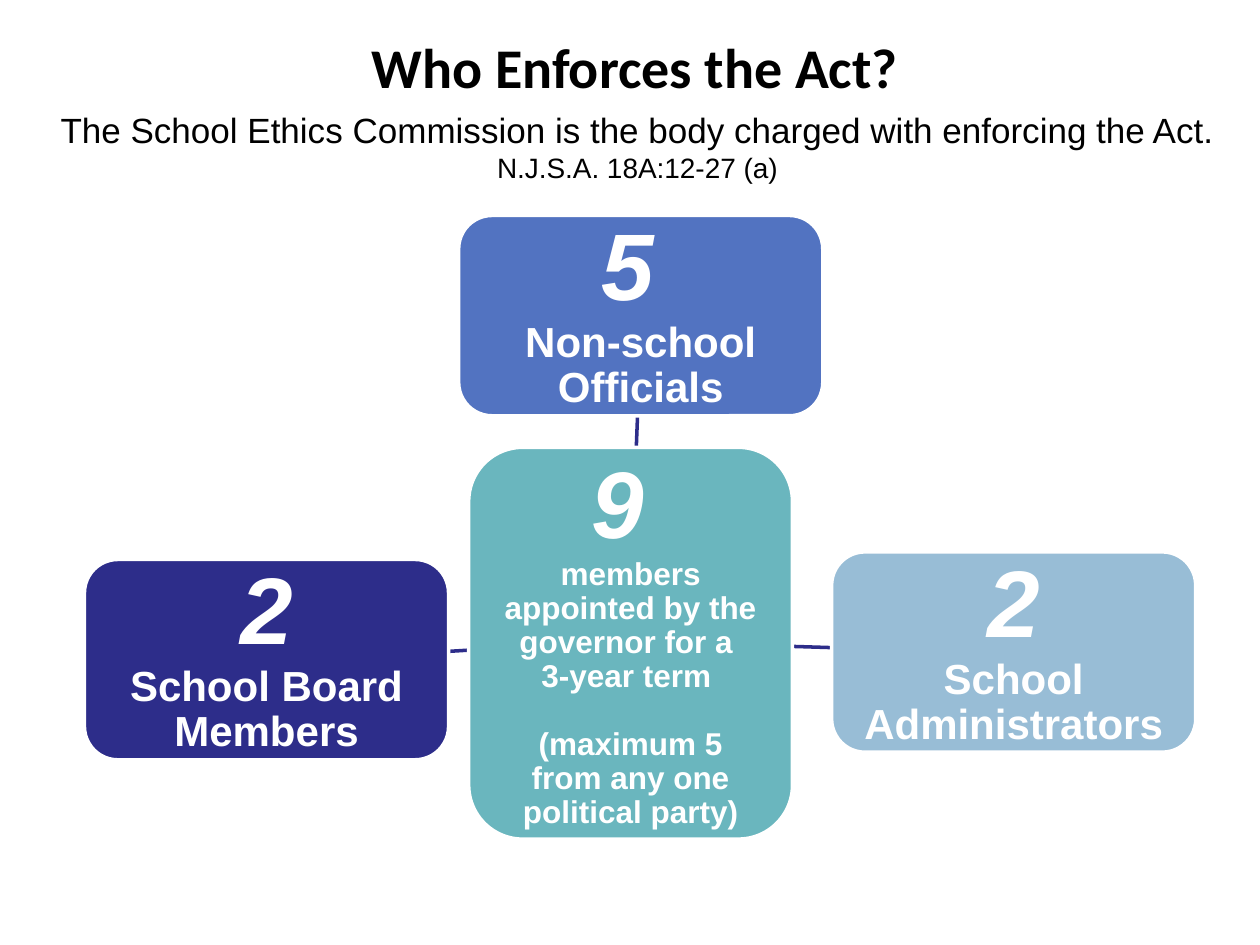
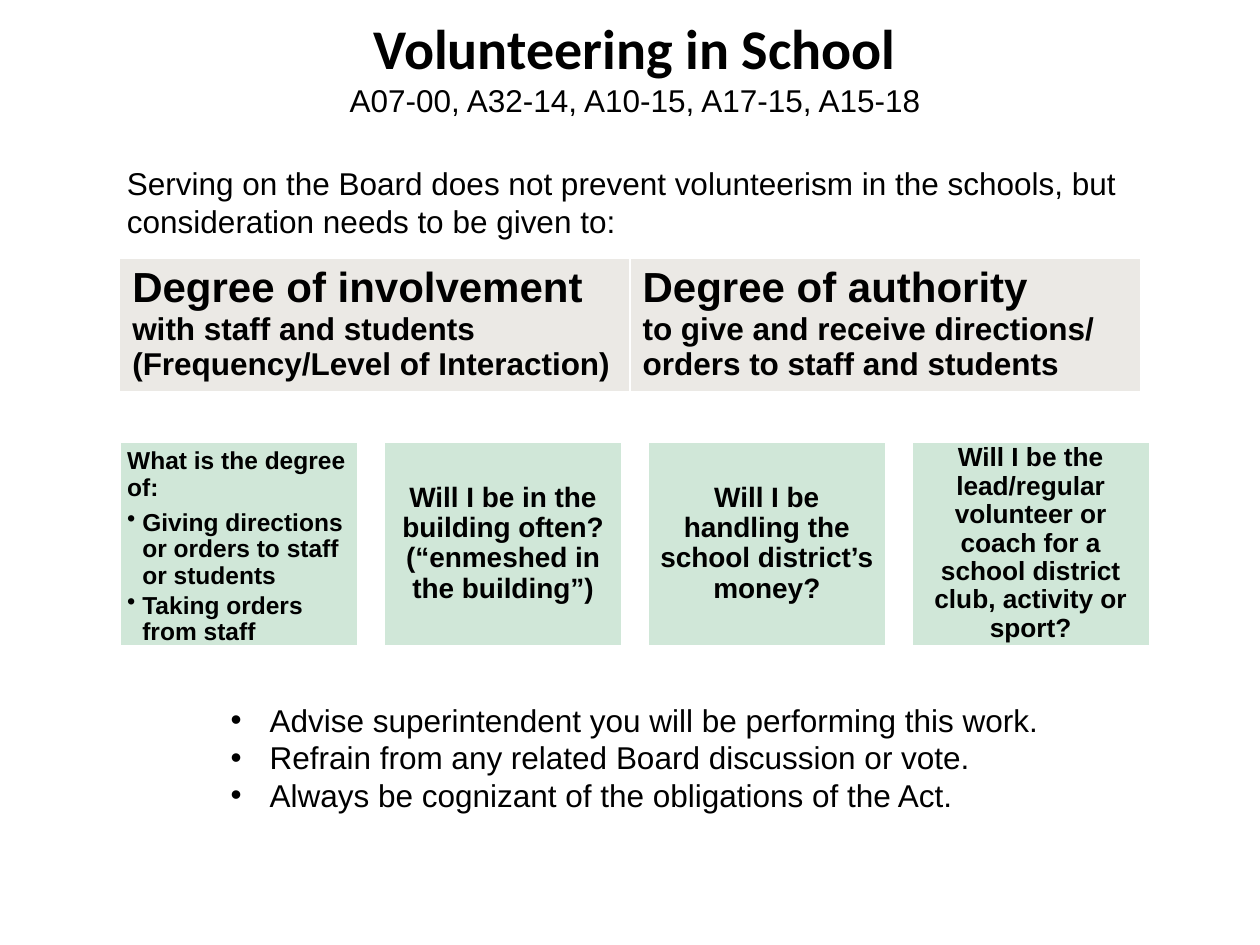
import lxml.etree
import pptx
import pptx.dml.color
import pptx.enum.shapes
import pptx.enum.text
import pptx.oxml.ns
import pptx.util

Inches, Pt = pptx.util.Inches, pptx.util.Pt
SHAPE = pptx.enum.shapes.MSO_SHAPE
ANCHOR = pptx.enum.text.MSO_ANCHOR
CENTER = pptx.enum.text.PP_ALIGN.CENTER
LEFT = pptx.enum.text.PP_ALIGN.LEFT

# Shared style
BLACK, WHITE, NAVY = "000000", "FFFFFF", "2D2D8A"
TEAL, BLUE, PALE_BLUE = "6AB6BE", "5273C1", "98BDD6"
CARD_GREEN, TABLE_GREY = "D0E7D8", "EBE9E5"
TITLE_AREA = (0.83, 0.17, 8.42, 0.71)
TITLE_FONT = {"name": "Calibri", "size": Pt(32), "bold": True}
NUMBER_FONT = {"size": Pt(54), "bold": True, "italic": True}

# Slide 1 content
ENFORCER_TITLE = "Who Enforces the Act?"
ENFORCER_LINES = [
    ("The School Ethics Commission is the body charged with enforcing the Act.", 20),
    ("N.J.S.A. 18A:12-27 (a)", 16),
]
COMMISSION_LINKS = [  # x1, y1, x2, y2
    (6.28, 5.13, 6.6, 5.14),
    (5.05, 3.55, 5.06, 3.3),
    (3.72, 5.16, 3.56, 5.17),
]
COMMISSION_BOXES = [  # area, fill, number, label size, label paragraphs
    ((3.72, 3.55, 2.57, 3.11), TEAL, "9 ", 18,
     ["members appointed by the governor for a \n3-year term ",
      "(maximum 5 from any one political party)"]),
    ((6.6, 4.38, 2.89, 1.59), PALE_BLUE, "2", 24, ["School Administrators"]),
    ((3.64, 1.71, 2.89, 1.59), BLUE, "5 ", 24, ["Non-school Officials"]),
    ((0.67, 4.44, 2.89, 1.59), NAVY, "2", 24, ["School Board Members"]),
]

# Slide 2 content
VOLUNTEER_TITLE = "Volunteering in School"
VOLUNTEER_CASES = "A07-00, A32-14, A10-15, A17-15, A15-18"
VOLUNTEER_INTRO = ("Serving on the Board does not prevent volunteerism in the schools, "
                   "but consideration needs to be given to:")
DEGREES = [
    ("Degree of involvement",
     ["with staff and students", "(Frequency/Level of Interaction)"]),
    ("Degree of authority",
     ["to give and receive directions/ orders to staff and students"]),
]
DIRECTION_QUESTION = "What is the degree of:"
DIRECTION_POINTS = ["Giving directions or orders to staff or students",
                    "Taking orders from staff"]
QUESTIONS = [  # text, size
    ("Will I be in the building often? (“enmeshed in the building”)", 16),
    ("Will I be handling the school district’s money?", 16),
    ("Will I be the lead/regular volunteer or coach for a school district club, "
     "activity or sport?", 15),
]
CARD_LEFT, CARD_TOP, CARD_WIDTH, CARD_HEIGHT = 0.95, 3.5, 1.9, 1.63
CARD_STEP = (7.23 - CARD_LEFT) / 3
ADVICE = [
    "Advise superintendent you will be performing this work.",
    "Refrain from any related Board discussion or vote.",
    "Always be cognizant of the obligations of the Act.",
]


def color(hex_value):
    return pptx.dml.color.RGBColor.from_string(hex_value)


def place(area):
    return [Inches(value) for value in area]


def set_all(target, values):
    for name, value in values.items():
        setattr(target, name, value)


def add_xml(parent, tag, **attributes):
    return lxml.etree.SubElement(parent, pptx.oxml.ns.qn(tag), attributes)


def add_bullet(para, indent):
    properties = para._p.get_or_add_pPr()
    properties.set("marL", str(Inches(indent)))
    properties.set("indent", str(-Inches(indent)))
    add_xml(properties, "a:buChar", char="•")


def write(frame, paragraphs, text_color=BLACK, **layout):
    """Each paragraph is (spans, format); each span is (text, font values)."""
    for index, (spans, values) in enumerate(paragraphs):
        para = frame.paragraphs[0] if index == 0 else frame.add_paragraph()
        values = {**layout, **values}
        indent = values.pop("bullet", None)
        set_all(para, {"space_before": Pt(0), **values})
        if indent:
            add_bullet(para, indent)
        for text, font in spans:
            for number, line in enumerate(text.split("\n")):
                if number:
                    para.add_line_break()
                if line:
                    span = para.add_run()
                    span.text = line
                    set_all(span.font, {"name": "Arial", **font})
                    span.font.color.rgb = color(text_color)


def set_frame(frame, anchor, margin=None):
    set_all(frame, {"word_wrap": True, "vertical_anchor": anchor,
                    "auto_size": pptx.enum.text.MSO_AUTO_SIZE.NONE})
    if margin is not None:
        for side in ("left", "top", "right", "bottom"):
            setattr(frame, f"margin_{side}", Inches(margin))


def move(shape, area):
    set_all(shape, dict(zip(("left", "top", "width", "height"), place(area))))


def add_page(deck, layout_index, title_spans):
    page = deck.slides.add_slide(deck.slide_layouts[layout_index])
    title = page.shapes.title
    move(title, TITLE_AREA)
    set_frame(title.text_frame, ANCHOR.MIDDLE)
    write(title.text_frame, [(title_spans, {})], alignment=CENTER)
    return page


def add_text(page, area, paragraphs, **layout):
    frame = page.shapes.add_textbox(*place(area)).text_frame
    set_frame(frame, ANCHOR.TOP)
    write(frame, paragraphs, **layout)


def add_box(page, kind, area, fill, margin, anchor=ANCHOR.MIDDLE):
    box = page.shapes.add_shape(kind, *place(area))
    box.shadow.inherit = False
    box.fill.solid()
    box.fill.fore_color.rgb = color(fill)
    box.line.color.rgb = color(WHITE)
    box.line.width = Pt(2)
    set_frame(box.text_frame, anchor, margin)
    return box.text_frame


def add_link(page, ends):
    link = page.shapes.add_connector(
        pptx.enum.shapes.MSO_CONNECTOR.STRAIGHT, *place(ends))
    link.line.color.rgb = color(NAVY)
    link.line.width = Pt(2)
    add_xml(link._element.spPr, "a:effectLst")


def add_degree_table(page):
    table = page.shapes.add_table(
        1, len(DEGREES), *place((0.95, 2.05, 8.1, 1.07))).table
    for cell, (heading, details) in zip(table.rows[0].cells, DEGREES):
        properties = cell._tc.get_or_add_tcPr()
        for side, width in (("L", 1), ("R", 1), ("T", 1), ("B", 3)):
            border = add_xml(properties, f"a:ln{side}", w=str(Pt(width)))
            add_xml(add_xml(border, "a:solidFill"), "a:srgbClr", val=WHITE)
        cell.fill.solid()
        cell.fill.fore_color.rgb = color(TABLE_GREY)
        lines = [(heading, 24)] + [(detail, 18) for detail in details]
        write(cell.text_frame,
              [([(text, {"size": Pt(size), "bold": True})], {}) for text, size in lines])


def build_enforcer_page(deck):
    page = add_page(deck, 5, [(ENFORCER_TITLE, TITLE_FONT)])
    add_text(page, (0.33, 0.81, 9.46, 0.71),
             [([(text, {"size": Pt(size)})], {}) for text, size in ENFORCER_LINES],
             alignment=CENTER)

    # Commission members around the centre box
    for ends in COMMISSION_LINKS:
        add_link(page, ends)
    for area, fill, number, size, labels in COMMISSION_BOXES:
        frame = add_box(page, SHAPE.ROUNDED_RECTANGLE, area, fill, 0.15)
        font = {"size": Pt(size), "bold": True}
        paragraphs = [([(label, font)], {}) for label in labels]
        paragraphs[0][0].insert(0, (number + "\n", NUMBER_FONT))
        for _, values in paragraphs[:-1]:
            values["space_after"] = Pt(19)
        write(frame, paragraphs, WHITE, alignment=CENTER, line_spacing=0.9)


def build_volunteer_page(deck):
    page = add_page(deck, 1, [(VOLUNTEER_TITLE + "\n", TITLE_FONT),
                              (VOLUNTEER_CASES, {"size": Pt(18), "bold": False})])
    add_text(page, (0.91, 1.25, 8.27, 0.71),
             [([(VOLUNTEER_INTRO, {"size": Pt(18)})], {})])
    add_degree_table(page)

    # Row of question cards
    areas = [(CARD_LEFT + index * CARD_STEP, CARD_TOP, CARD_WIDTH, CARD_HEIGHT)
             for index in range(len(QUESTIONS) + 1)]
    font = {"size": Pt(14), "bold": True}
    frame = add_box(page, SHAPE.RECTANGLE, areas[0], CARD_GREEN, 0.06, ANCHOR.TOP)
    write(frame,
          [([(DIRECTION_QUESTION, font)], {"space_after": Pt(5)})]
          + [([(point, font)], {"space_after": Pt(2), "bullet": 0.12})
             for point in DIRECTION_POINTS],
          alignment=LEFT, line_spacing=0.9)
    for area, (question, size) in zip(areas[1:], QUESTIONS):
        frame = add_box(page, SHAPE.RECTANGLE, area, CARD_GREEN, 0.07)
        write(frame, [([(question, {"size": Pt(size), "bold": True})], {})],
              alignment=CENTER, line_spacing=0.9)

    # Closing advice
    body = page.placeholders[1]
    move(body, (1.73, 5.51, 6.67, 1.01))
    set_frame(body.text_frame, ANCHOR.TOP)
    write(body.text_frame,
          [([(text, {"size": Pt(18)})], {}) for text in ADVICE], bullet=0.31)


def main():
    deck = pptx.Presentation()
    deck.slide_width, deck.slide_height = Inches(10), Inches(7.5)
    build_enforcer_page(deck)
    build_volunteer_page(deck)
    deck.save("out.pptx")


if __name__ == "__main__":
    main()
